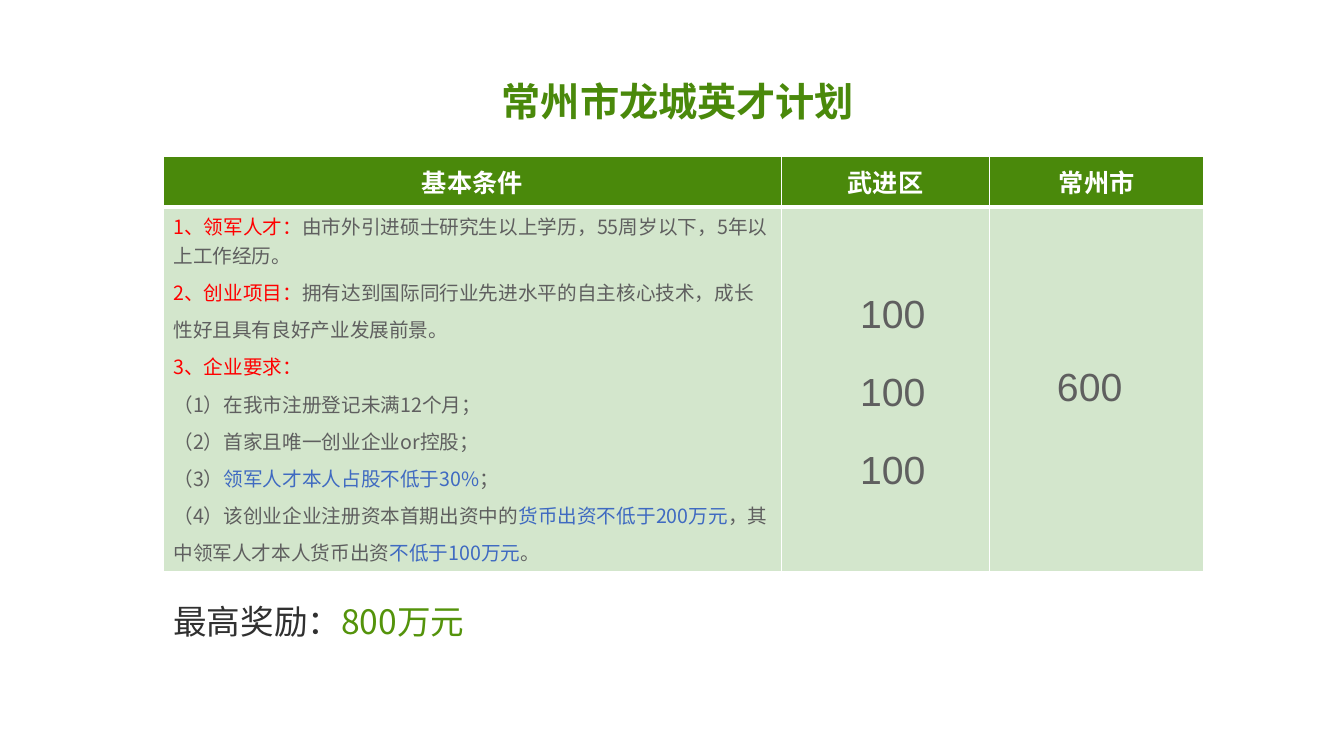
from dataclasses import dataclass

from lxml import etree
from pptx import Presentation
from pptx.dml.color import RGBColor
from pptx.enum.text import MSO_ANCHOR, PP_ALIGN
from pptx.oxml.ns import qn
from pptx.util import Inches, Pt

LEFT, MID = PP_ALIGN.LEFT, PP_ALIGN.CENTER
TOP, CENTRE = MSO_ANCHOR.TOP, MSO_ANCHOR.MIDDLE
WIDE, HIGH = Inches(13.333), Inches(7.5)
TITLE_ONLY = 5


@dataclass(frozen=True)
class Theme:
    green: str = "4A890B"
    lime: str = "54930B"
    pale: str = "D3E6CC"
    white: str = "FFFFFF"
    grey: str = "5F5F5F"
    dark: str = "303030"
    red: str = "FF0000"
    blue: str = "3F6AC1"
    latin: str = "Arial"
    asian: str = "Noto Sans CJK SC"
    large: int = 28
    award: int = 24
    head: int = 18
    small: int = 14


T = Theme()

# Wording: each line is a list of (text, colour) runs
HEADS = ["基本条件", "武进区", "常州市"]
RULES = [
    [("1、领军人才：", T.red),
     ("由市外引进硕士研究生以上学历，55周岁以下，5年以上工作经历。", T.grey)],
    [("2、创业项目：", T.red),
     ("拥有达到国际同行业先进水平的自主核心技术，成长性好且具有良好产业发展前景。", T.grey)],
    [("3、企业要求：", T.red)],
    [("（1）在我市注册登记未满12个月；", T.grey)],
    [("（2）首家且唯一创业企业or控股；", T.grey)],
    [("（3）", T.grey), ("领军人才本人占股不低于30%", T.blue), ("；", T.grey)],
    [("（4）该创业企业注册资本首期出资中的", T.grey),
     ("货币出资不低于200万元", T.blue),
     ("，其中领军人才本人货币出资", T.grey),
     ("不低于100万元", T.blue), ("。", T.grey)],
]
AWARD = [("最高奖励：", T.dark), ("800万元", T.lime)]

# Grid, in percent of the slide's width and height
EDGE = 12.15
COLS = [45.98, 15.52, 15.9]
ROWS = [6.67, 48.27]


def across(share):
    return round(WIDE * share / 100)


def down(share):
    return round(HIGH * share / 100)


def place(x, y, w, h):
    return across(x), down(y), across(w), down(h)


def write(frame, lines, size, face, align=LEFT, bold=False, space=None, gap=None):
    """Fill a text frame; space is the line spacing, gap the space before."""
    for i, runs in enumerate(lines):
        para = frame.paragraphs[0] if i == 0 else frame.add_paragraph()
        para.alignment = align
        if space:
            para.line_spacing = space
        if gap and i:
            para.space_before = Pt(gap)
        for text, colour in runs:
            run = para.add_run()
            run.text = text
            font = run.font
            font.size, font.bold, font.name = Pt(size), bold, face
            font.color.rgb = RGBColor.from_string(colour)
            etree.SubElement(run._r.get_or_add_rPr(), qn("a:ea"), typeface=T.asian)


def add_title(slide, text):
    title = slide.shapes.title
    title.left, title.top, title.width, title.height = place(EDGE, 10.93, 76.58, 8.53)
    frame = title.text_frame
    frame.word_wrap = True
    frame.vertical_anchor = TOP
    frame.margin_top = frame.margin_bottom = 0
    write(frame, [[(text, T.green)]], T.large, T.latin, MID, True, 0.9)


def add_box(slide, spot, lines, size, face, **style):
    frame = slide.shapes.add_textbox(*place(*spot)).text_frame
    frame.word_wrap = True
    write(frame, lines, size, face, **style)


def paint(cell, fill, base):
    """Fill a cell and rule it in white; base is the lower line's width."""
    cell.vertical_anchor = CENTRE
    props = cell._tc.get_or_add_tcPr()
    for side, width in (("L", 1), ("R", 1), ("T", 1), ("B", base)):
        line = etree.SubElement(props, qn(f"a:ln{side}"), w=str(Pt(width)))
        solid = etree.SubElement(line, qn("a:solidFill"))
        etree.SubElement(solid, qn("a:srgbClr"), val=T.white)
    cell.fill.solid()
    cell.fill.fore_color.rgb = RGBColor.from_string(fill)


def add_grid(slide):
    spot = place(EDGE, 20.67, sum(COLS), sum(ROWS))
    table = slide.shapes.add_table(len(ROWS), len(COLS), *spot).table
    table.horz_banding = False
    for row, share in zip(table.rows, ROWS):
        row.height = down(share)
    for i, (share, head) in enumerate(zip(COLS, HEADS)):
        table.columns[i].width = across(share)
        top, body = table.cell(0, i), table.cell(1, i)
        paint(top, T.green, 3)
        paint(body, T.pale, 1)
        write(top.text_frame, [[(head, T.white)]], T.head, T.latin, MID, True)
    frame = table.cell(1, 0).text_frame
    write(frame, RULES, T.small, T.asian)
    for para in frame.paragraphs[1:]:
        para.line_spacing = 1.3


def main():
    deck = Presentation()
    deck.slide_width, deck.slide_height = WIDE, HIGH
    slide = deck.slides.add_slide(deck.slide_layouts[TITLE_ONLY])
    add_title(slide, "常州市龙城英才计划")
    add_grid(slide)
    # Award line and the sums over the two right columns
    add_box(slide, (EDGE, 78.8, 57.6, 7.73), [AWARD], T.award, T.asian)
    add_box(slide, (61.88, 33.87, 9.08, 41.6), [[("100", T.grey)]] * 3,
            T.large, T.latin, align=MID, space=1.6, gap=2)
    add_box(slide, (76.58, 47.33, 9, 8.67), [[("600", T.grey)]],
            T.large, T.latin, align=MID)
    deck.save("out.pptx")


if __name__ == "__main__":
    main()
